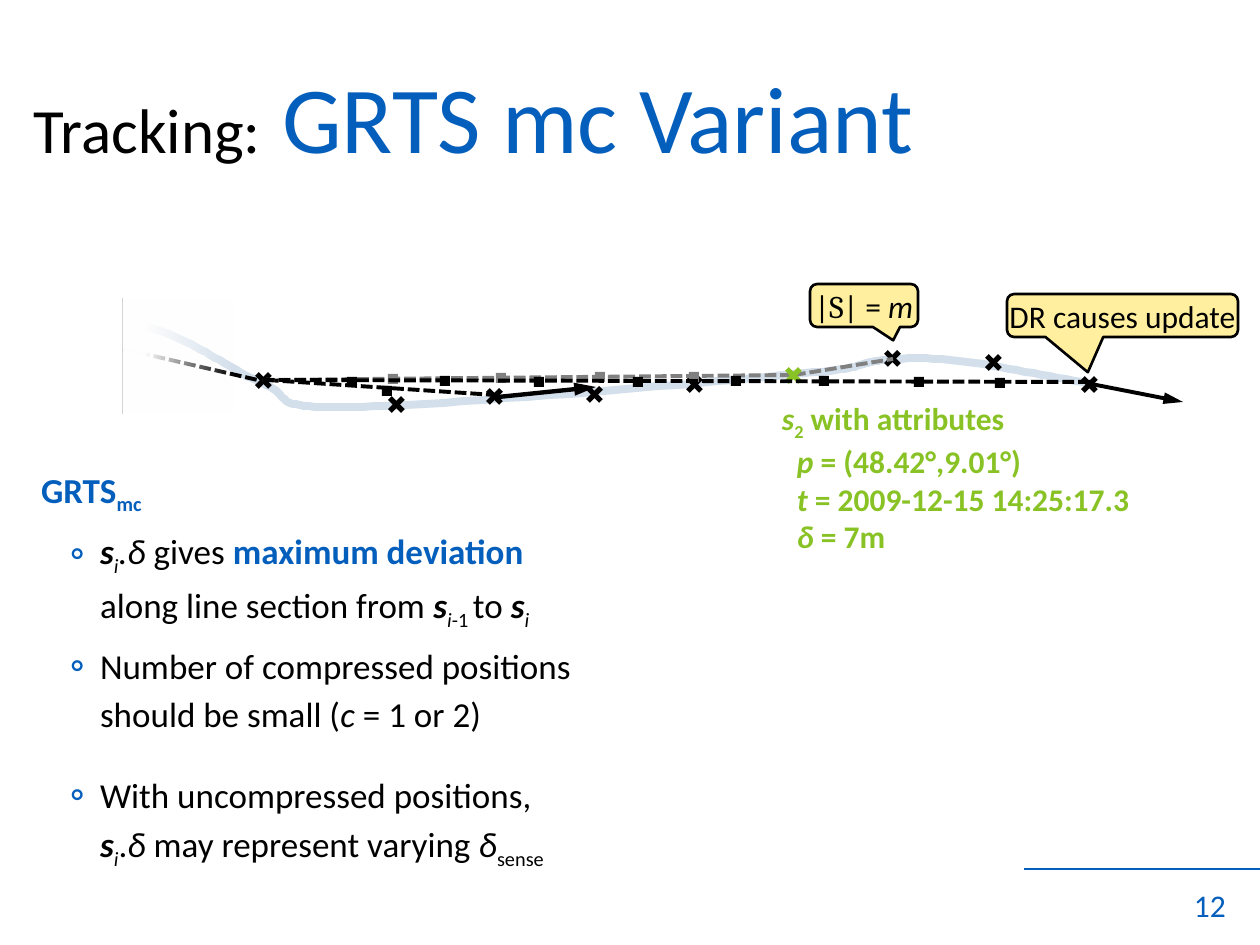
from lxml import etree
from pptx import Presentation, util as u
from pptx.dml.color import RGBColor
from pptx.enum import dml, shapes as sh, text as tx
from pptx.oxml.ns import qn

PX = 914400 / 126
BLACK = RGBColor(0, 0, 0)
WHITE = RGBColor(255, 255, 255)
BLUE = RGBColor(0x04, 0x5E, 0xBC)
GREEN = RGBColor(0x89, 0xC2, 0x25)
GREY = RGBColor(0x80, 0x80, 0x80)
ROAD = RGBColor(0xD3, 0xDF, 0xEB)
YELLOW = RGBColor(0xFF, 0xEF, 0x9F)


def px(*values):
    return [u.Emu(round(v * PX)) for v in values]


# ---- Text ----
def add_text(par, text, size=20, color=BLACK, bold=False, italic=False,
             sub=False, font="Calibri"):
    run = par.add_run()
    run.text = text
    run.font.size, run.font.name = u.Pt(size), font
    run.font.bold, run.font.italic = bold, italic
    run.font.color.rgb = color
    if sub:
        run.font._element.set("baseline", "-25000")


def set_frame(shape, anchor=tx.MSO_ANCHOR.TOP, wrap=False):
    frame = shape.text_frame
    frame.margin_left = frame.margin_right = 0
    frame.margin_top = frame.margin_bottom = 0
    frame.vertical_anchor, frame.word_wrap = anchor, wrap
    return frame


def set_indent(par, margin, hanging=0):
    props = par._p.get_or_add_pPr()
    props.set("marL", str(px(margin)[0]))
    props.set("indent", str(-px(hanging)[0]))
    return props


def add_bullet(par):
    props = set_indent(par, 89, 30)
    color = etree.SubElement(props, qn("a:buClr"))
    etree.SubElement(color, qn("a:srgbClr"), val=str(BLUE))
    etree.SubElement(props, qn("a:buSzPct"), val="120000")
    etree.SubElement(props, qn("a:buFont"), typeface="Calibri")
    etree.SubElement(props, qn("a:buChar"), char="◦")


# ---- Drawing parts ----
def add_line(shapes, start, end, color=BLACK, width=2.25, dashed=False, arrow=False):
    line = shapes.add_connector(sh.MSO_CONNECTOR.STRAIGHT, *px(*start, *end))
    line.line.color.rgb, line.line.width = color, u.Pt(width)
    if dashed:
        line.line.dash_style = dml.MSO_LINE.SQUARE_DOT
    if arrow:
        etree.SubElement(line.line._get_or_add_ln(), qn("a:tailEnd"),
                         type="triangle", w="med", len="lg")
    etree.SubElement(line._element.spPr, qn("a:effectLst"))


def add_shape(shapes, kind, box, fill=None):
    shape = shapes.add_shape(kind, *px(*box))
    shape.shadow.inherit = False
    shape.line.fill.background()
    if fill is not None:
        shape.fill.solid()
        shape.fill.fore_color.rgb = fill
    return shape


def add_cross(slide, center, color=BLACK):
    x, y = center
    group = slide.shapes.add_group_shape().shapes
    add_line(group, (x - 6, y - 6), (x + 7, y + 7), color, 3)
    add_line(group, (x + 7, y - 6), (x - 6, y + 7), color, 3)


def add_track(slide, start, end, squares, color=BLACK):
    group = slide.shapes.add_group_shape().shapes
    add_line(group, start, end, color, dashed=True)
    for x, y in squares:
        add_shape(group, sh.MSO_SHAPE.RECTANGLE, (x - 5, y - 5, 10, 10), color)


def add_callout(slide, box, pointer, runs):
    callout = add_shape(slide.shapes, sh.MSO_SHAPE.ROUNDED_RECTANGULAR_CALLOUT, box, YELLOW)
    callout.line.color.rgb, callout.line.width = BLACK, u.Pt(1.5)
    callout.adjustments[0], callout.adjustments[1] = pointer
    par = set_frame(callout, tx.MSO_ANCHOR.MIDDLE).paragraphs[0]
    par.alignment = tx.PP_ALIGN.CENTER
    for text, style in runs:
        add_text(par, text, size=18, **style)


def add_curve(slide, start, segments, steps=24):
    points, p0 = [], start
    for p1, p2, p3 in segments:
        for t in (n / steps for n in range(1, steps + 1)):
            weights = ((1 - t) ** 3, 3 * t * (1 - t) ** 2, 3 * t * t * (1 - t), t ** 3)
            points.append([sum(w * p[axis] for w, p in zip(weights, (p0, p1, p2, p3)))
                           for axis in (0, 1)])
        p0 = p3
    builder = slide.shapes.build_freeform(*start, scale=PX)
    builder.add_line_segments(points, close=False)
    curve = builder.convert_to_shape()
    curve.shadow.inherit = False
    curve.fill.background()
    curve.line.color.rgb, curve.line.width = ROAD, u.Pt(4.5)


def add_fade(slide, box):
    fade = add_shape(slide.shapes, sh.MSO_SHAPE.RECTANGLE, box)
    fade.fill.gradient()
    fade.fill.gradient_angle = 0
    for stop, position, alpha in zip(fade.fill.gradient_stops, (0.2, 1), (100000, 0)):
        stop.color.rgb, stop.position = WHITE, position
        etree.SubElement(stop._gs.find(qn("a:srgbClr")), qn("a:alpha"), val=str(alpha))


# ---- Regions ----
def draw_title(slide, box):
    par = set_frame(slide.shapes.add_textbox(*px(*box)), wrap=True).paragraphs[0]
    add_text(par, "Tracking:", size=36)
    add_text(par, " GRTS mc Variant", size=54, color=BLUE)


def draw_trajectory(slide, left, top):
    def at(x, y):
        return left + x, top + y

    def every(*points):
        return [at(*point) for point in points]

    # Actual movement and sensed positions
    add_curve(slide, at(24, 46), [
        every((78, 61), (108, 89), (142, 103)),
        every((177, 117), (142, 128), (230, 127)),
        every((318, 126), (583, 103), (674, 94)),
        every((765, 87), (724, 83), (773, 79)),
        every((838, 74), (906, 94), (971, 103))])
    add_line(slide.shapes, at(3, 69), at(142, 101), dashed=True)
    for center in every((276, 124), (772, 78), (374, 116), (474, 114), (574, 104),
                        (873, 82), (969, 104), (143, 100)):
        add_cross(slide, center)

    # Simplified sections and predictions
    add_track(slide, at(147, 100), at(375, 115), every((267, 111)))
    add_line(slide.shapes, at(378, 117), at(476, 107), width=2.5, arrow=True)
    add_line(slide.shapes, at(674, 95), at(773, 79), GREY, dashed=True)
    add_track(slide, at(143, 100), at(673, 95),
              every((273, 99), (381, 98), (480, 97), (574, 97)), GREY)
    add_line(slide.shapes, at(966, 103), at(1063, 122), arrow=True)

    # Callouts and compressed position
    add_callout(slide, (*at(690, 4), 108, 43), (0.27, 0.81),
                [("|", {}), ("S", {"font": "Cambria"}), ("| = ", {}), ("m", {"italic": True})])
    add_cross(slide, at(673, 95), GREEN)
    add_callout(slide, (*at(887, 14), 231, 43), (-0.15, 1.32), [("DR causes update", {})])
    add_fade(slide, (*at(3, 19), 110, 115))
    add_track(slide, at(143, 100), at(970, 102),
              every((232, 102), (325, 101), (419, 102), (518, 102), (616, 101),
                    (704, 101), (799, 102), (880, 103)))


def draw_attributes(slide, box):
    frame = set_frame(slide.shapes.add_textbox(*px(*box)))
    style = {"size": 18, "color": GREEN, "bold": True}
    heading = frame.paragraphs[0]
    add_text(heading, "s", italic=True, **style)
    add_text(heading, "2", sub=True, **style)
    add_text(heading, " with attributes", **style)
    for symbol, value in (("p", "(48.42°,9.01°)"), ("t", "2009-12-15 14:25:17.3"), ("δ", "7m")):
        par = frame.add_paragraph()
        set_indent(par, 15)
        add_text(par, symbol, italic=True, **style)
        add_text(par, " = " + value, **style)


def draw_body(slide, box):
    frame = set_frame(slide.shapes.add_textbox(*px(*box)), tx.MSO_ANCHOR.BOTTOM, True)
    key, it = {"bold": True, "italic": True}, {"italic": True}
    index, low = {"italic": True, "sub": True}, {"sub": True}
    strong = {"bold": True, "color": BLUE}
    s_i = [("s", key), ("i", index)]
    # Each item: space before, then its lines of runs
    items = [
        (4, [[("GRTS", strong), ("mc", {**strong, **low})]]),
        (4, [[*s_i, (".δ", it), (" gives ", {}), ("maximum deviation", strong)],
             [("along line section from ", {}), *s_i, ("-1 ", low), ("to ", {}), *s_i]]),
        (4, [[("Number of compressed positions", {})],
             [("should be small (", {}), ("c", it), (" = 1 or 2)", {})]]),
        (19, [[("With uncompressed positions,", {})],
              [*s_i, (".", {}), ("δ", it), (" may represent varying ", {}),
               ("δ", it), ("sense", low)]])]
    for number, (space, lines) in enumerate(items):
        par = frame.add_paragraph() if number else frame.paragraphs[0]
        par.line_spacing, par.space_before = 1.14, u.Pt(space)
        if number:
            add_bullet(par)
        else:
            set_indent(par, 30)
        for row, runs in enumerate(lines):
            if row:
                par.add_line_break()
            for text, style in runs:
                add_text(par, text, **style)


def draw_footer(slide, left, top):
    add_line(slide.shapes, (left + 236, top), (left, top), BLUE, 1)
    number = slide.shapes.add_textbox(*px(left + 99, top - 2, 103, 57))
    par = set_frame(number, tx.MSO_ANCHOR.BOTTOM).paragraphs[0]
    par.alignment = tx.PP_ALIGN.RIGHT
    add_text(par, "12", size=18, color=BLUE)


def main():
    deck = Presentation()
    deck.slide_width, deck.slide_height = px(1260, 945)
    slide = deck.slides.add_slide(deck.slide_layouts[6])
    draw_footer(slide, 1024, 869)
    draw_body(slide, (11, 449, 621, 421))
    draw_title(slide, (34, 59, 1191, 141))
    draw_trajectory(slide, 120, 280)
    draw_attributes(slide, (782, 399, 350, 152))
    deck.save("out.pptx")


if __name__ == "__main__":
    main()
